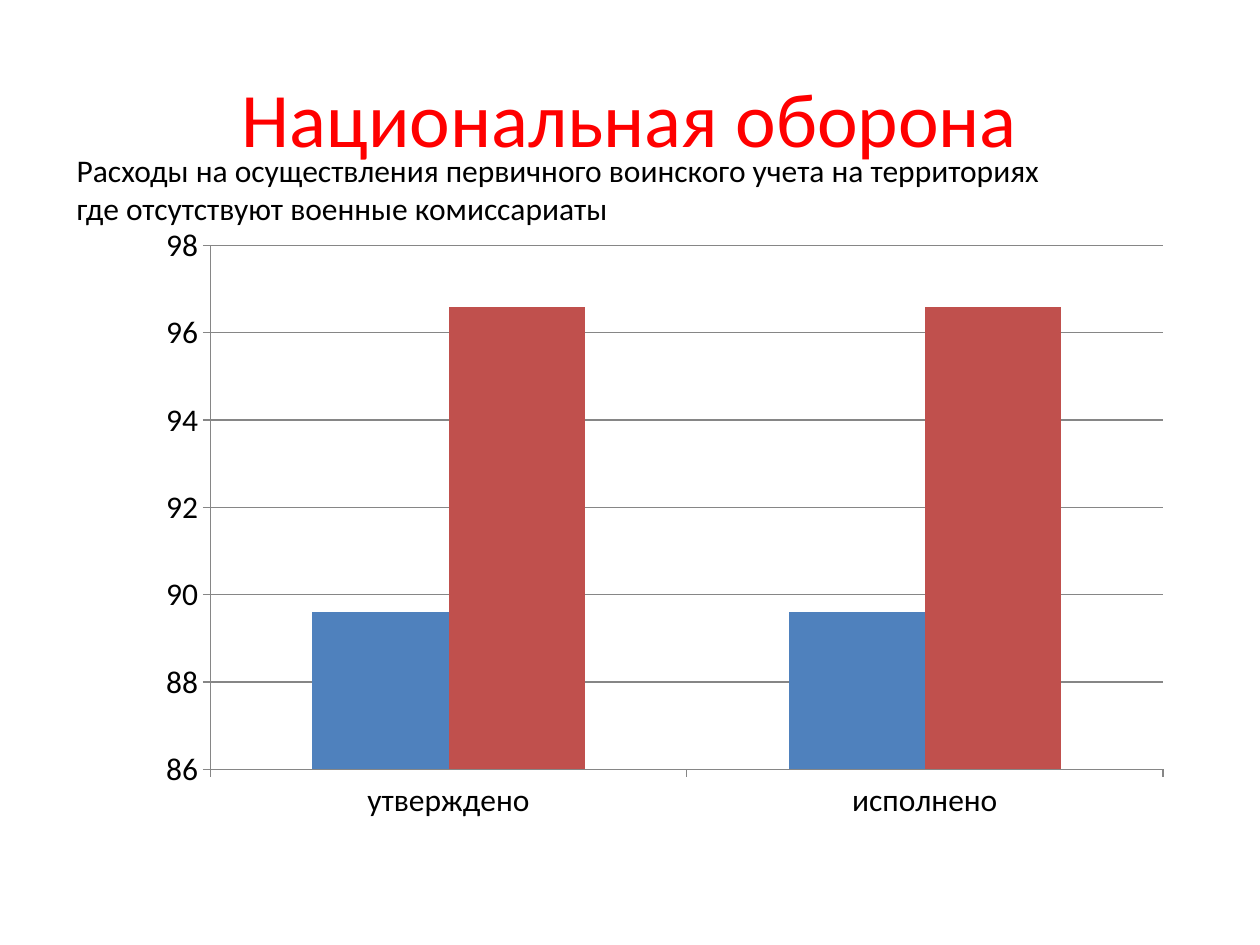
from lxml import etree
from pptx import Presentation
from pptx import util as u
from pptx.chart.data import CategoryChartData
from pptx.dml.color import RGBColor
from pptx.enum import chart as charts, text
from pptx.oxml import ns

COLORS = {"title": "FF0000", "body": "000000", "axis": "868686",
          "first": "4F81BD", "second": "C0504D"}


class SlideBuilder:
    """Holds the style and the current slide."""
    font = "Calibri"

    def __init__(self, slide):
        self.slide = slide

    def style_font(self, font, size, color):
        font.name = self.font
        font.size = u.Pt(size)
        font.color.rgb = RGBColor.from_string(COLORS[color])

    def style_line(self, line):
        line.width = u.Pt(0.75)
        line.color.rgb = RGBColor.from_string(COLORS["axis"])

    def add_text(self, place, lines, size, color, align, anchor):
        box = self.slide.shapes.add_textbox(*map(u.Inches, place))
        frame = box.text_frame
        frame.word_wrap = True
        frame.vertical_anchor = anchor
        for index, line in enumerate(lines):
            para = frame.add_paragraph() if index else frame.paragraphs[0]
            para.alignment = align
            span = para.add_run()
            span.text = line
            self.style_font(span.font, size, color)

    def add_columns(self, place, categories, series, plot_area):
        data = CategoryChartData()
        data.categories = categories
        for name, values, _ in series:
            data.add_series(name, values)
        chart = self.slide.shapes.add_chart(
            charts.XL_CHART_TYPE.COLUMN_CLUSTERED, *map(u.Inches, place), data).chart
        chart.has_legend = False
        chart.has_title = False
        self.style_font(chart.font, 18, "body")

        # Columns
        plot = chart.plots[0]
        plot.gap_width = 150
        plot.overlap = 0
        plot.vary_by_categories = False
        for column, (_, _, color) in zip(plot.series, series):
            column.format.fill.solid()
            column.format.fill.fore_color.rgb = RGBColor.from_string(COLORS[color])

        # Axes and gridlines
        for axis in (chart.category_axis, chart.value_axis):
            axis.major_tick_mark = charts.XL_TICK_MARK.OUTSIDE
            axis.minor_tick_mark = charts.XL_TICK_MARK.NONE
            self.style_line(axis.format.line)
        scale = chart.value_axis
        scale.minimum_scale, scale.maximum_scale, scale.major_unit = 86, 98, 2
        scale.tick_labels.number_format = "General"
        scale.tick_labels.number_format_is_linked = False
        scale.has_major_gridlines = True
        self.style_line(scale.major_gridlines.format.line)
        self.place_plot(chart, plot_area)

    def place_plot(self, chart, plot_area):
        """Fix the inner plot area as fractions of the chart frame."""
        area = chart.element.find(".//" + ns.qn("c:plotArea"))
        for old in area.findall(ns.qn("c:layout")):
            area.remove(old)
        layout = etree.Element(ns.qn("c:layout"))
        manual = etree.SubElement(layout, ns.qn("c:manualLayout"))
        settings = [("layoutTarget", "inner"), ("xMode", "edge"), ("yMode", "edge"),
                    *zip("xywh", plot_area)]
        for tag, value in settings:
            etree.SubElement(manual, ns.qn("c:" + tag), val=str(value))
        area.insert(0, layout)


def main():
    deck = Presentation()
    deck.slide_width, deck.slide_height = u.Inches(10), u.Inches(7.5)
    page = SlideBuilder(deck.slides.add_slide(deck.slide_layouts[6]))

    # Title
    page.add_text((0.5, 0.3, 9, 1.25), ["Национальная оборона"], 44, "title",
                  text.PP_ALIGN.CENTER, text.MSO_ANCHOR.MIDDLE)

    # Approved and actual spending
    page.add_columns((0.5, 1.75, 9, 4.95), ["утверждено", "исполнено"],
                     [("Series 1", (89.6, 89.6), "first"),
                      ("Series 2", (96.6, 96.6), "second")],
                     (0.13, 0.04, 0.84, 0.84))

    # Subtitle
    page.add_text((0.51, 1.15, 9.29, 0.71),
                  ["Расходы на осуществления первичного воинского учета на территориях",
                   "где отсутствуют военные комиссариаты"],
                  18, "body", text.PP_ALIGN.LEFT, text.MSO_ANCHOR.TOP)

    deck.save("out.pptx")


if __name__ == "__main__":
    main()
